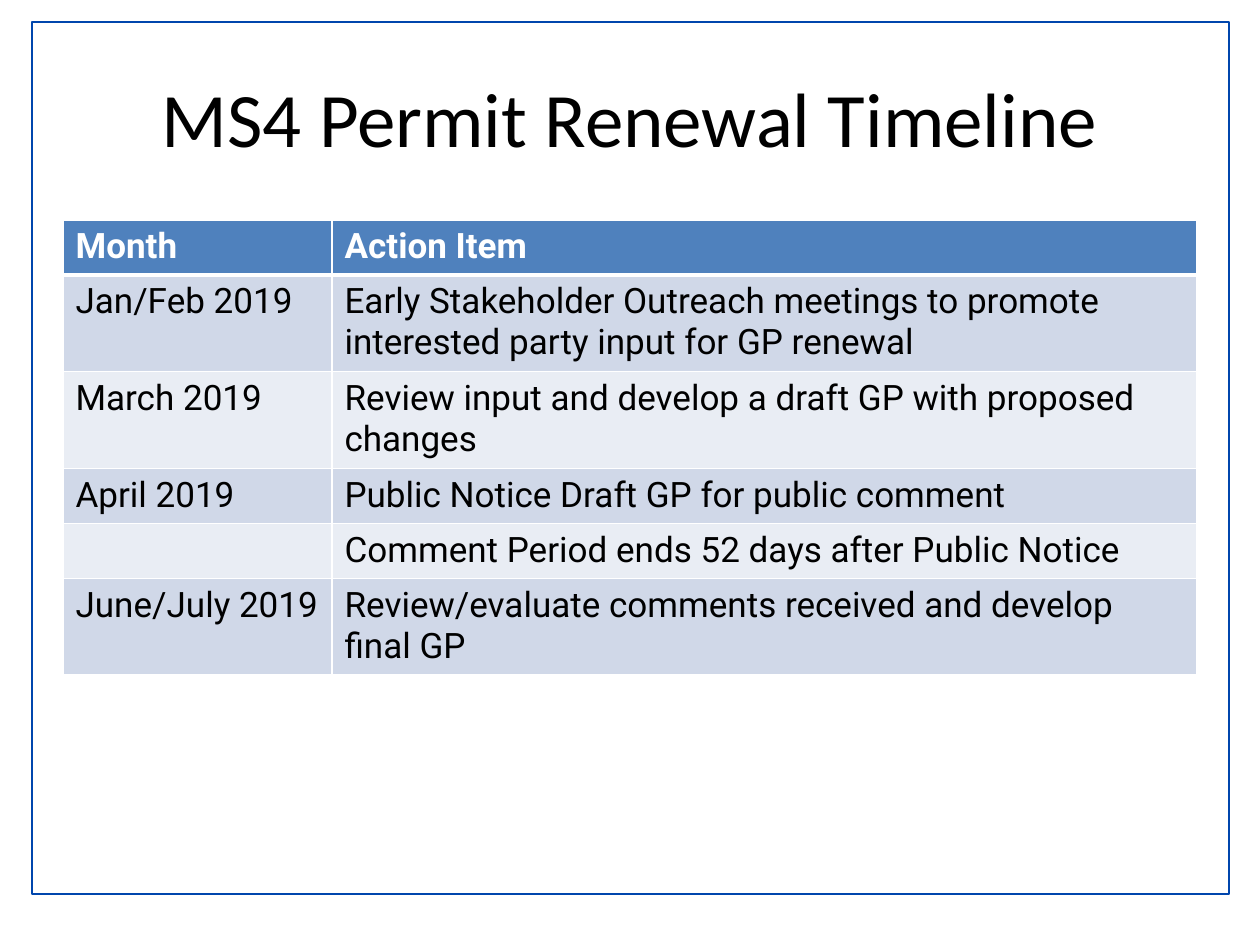
from lxml import etree
from pptx import Presentation
from pptx import util as u
from pptx.dml.color import RGBColor
from pptx.enum import shapes, text
from pptx.oxml.ns import qn

SCALE = u.Inches(1) / 126
ROWS = [
    ("Month", "Action Item"),
    ("Jan/Feb 2019", "Early Stakeholder Outreach meetings to promote "
                     "interested party input for GP renewal"),
    ("March 2019", "Review input and develop a draft GP with proposed changes"),
    ("April 2019", "Public Notice Draft GP for public comment"),
    ("", "Comment Period ends 52 days after Public Notice"),
    ("June/July 2019", "Review/evaluate comments received and develop final GP"),
]


def px(*sizes):
    return [u.Emu(round(size * SCALE)) for size in sizes]


def color(code):
    return RGBColor.from_string(code)


class Deck:
    """Holds the style and the current slide."""

    ink, white, blue, head = "000000", "FFFFFF", "0046AD", "4F81BD"
    bands = "E9EDF4", "D0D8E8"

    def __init__(self):
        self.prs = Presentation()
        self.prs.slide_width, self.prs.slide_height = px(1260, 945)
        self.slide = self.prs.slides.add_slide(self.prs.slide_layouts[6])

    def run(self, para, words, font, size, tint, bold=False):
        run = para.add_run()
        run.text = words
        run.font.name, run.font.size, run.font.bold = font, u.Pt(size), bold
        run.font.color.rgb = color(tint)

    def frame(self, *box):
        rect = self.slide.shapes.add_shape(shapes.MSO_SHAPE.RECTANGLE, *px(*box))
        rect.shadow.inherit = False
        rect.fill.background()
        rect.line.color.rgb = color(self.blue)
        rect.line.width = u.Pt(1)

    def title(self, words, *box):
        body = self.slide.shapes.add_textbox(*px(*box)).text_frame
        body.word_wrap = True
        body.vertical_anchor = text.MSO_ANCHOR.MIDDLE
        para = body.paragraphs[0]
        para.alignment = text.PP_ALIGN.CENTER
        self.run(para, words, "Calibri", 44, self.ink)

    def border(self, cell, side, width):
        props = cell._tc.get_or_add_tcPr()
        line = etree.SubElement(props, qn(f"a:ln{side}"), w=str(u.Pt(width)))
        fill = etree.SubElement(line, qn("a:solidFill"))
        etree.SubElement(fill, qn("a:srgbClr"), val=self.white)

    def table(self, rows, cols, highs, left, top):
        box = px(left, top, sum(cols), sum(highs))
        grid = self.slide.shapes.add_table(len(rows), len(cols), *box).table
        for col, wide in zip(grid.columns, px(*cols)):
            col.width = wide
        for row, high in zip(grid.rows, px(*highs)):
            row.height = high
        for i, row in enumerate(rows):
            for j, words in enumerate(row):
                self.cell(grid.cell(i, j), words, i)

    def cell(self, cell, words, row):
        first = row == 0
        for side in "LRTB":
            thick = (first and side == "B") or (row == 1 and side == "T")
            self.border(cell, side, 3 if thick else 1)
        cell.fill.solid()
        cell.fill.fore_color.rgb = color(self.head if first else self.bands[row % 2])
        para = cell.text_frame.paragraphs[0]
        if words:
            tint = self.white if first else self.ink
            self.run(para, words, "Roboto", 20, tint, first)
        else:
            para.font.size = u.Pt(20)


def main():
    deck = Deck()
    deck.frame(32, 22, 1197, 872)
    deck.title("MS4 Permit Renewal Timeline", 63, 38, 1134, 157)
    deck.table(ROWS, (269, 865), (55, 94, 55, 55, 55, 55), 63, 220)
    deck.prs.save("out.pptx")


if __name__ == "__main__":
    main()
